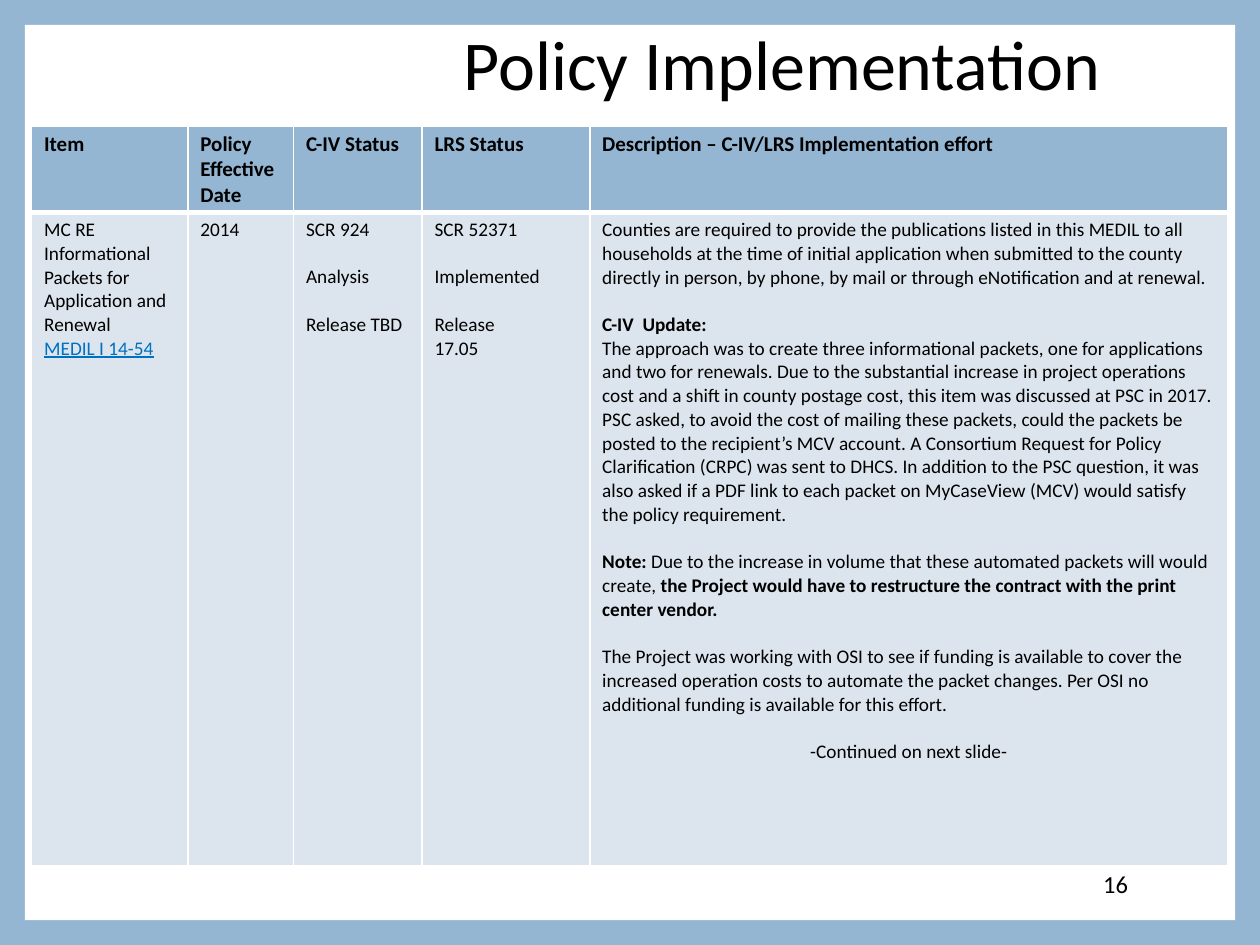
from lxml.etree import SubElement
from pptx import Presentation
from pptx.dml.color import RGBColor
from pptx.enum.shapes import MSO_SHAPE
from pptx.enum.text import MSO_ANCHOR, PP_ALIGN
from pptx.oxml.ns import qn
from pptx.util import Cm, Pt

BLUE, PALE, WHITE, BLACK, LINK = "94B6D2", "DCE5EE", "FFFFFF", "000000", "0070C0"
FONT = "Calibri"
GAP = 13.5

COLUMNS = [3.15, 2.13, 2.59, 3.38, 12.86]
HEADINGS = ["Item", "Policy Effective Date", "C-IV Status", "LRS Status",
            "Description – C-IV/LRS Implementation effort"]
ITEM = [
    {"runs": [("MC RE Informational Packets for Application and Renewal", "")]},
    {"runs": [("MEDIL I 14-54", "link")]},
]
EFFECTIVE = [{"runs": [("2014", "")]}]
CIV_STATUS = [
    {"runs": [("SCR 924", "")]},
    {"runs": [("Analysis", "")], "gap": GAP},
    {"runs": [("Release TBD", "")], "gap": GAP},
]
LRS_STATUS = [
    {"runs": [("SCR 52371", "")]},
    {"runs": [("Implemented", "")], "gap": GAP},
    {"runs": [("Release", "")], "gap": GAP},
    {"runs": [("17.05", "")]},
]
DESCRIPTION = [
    {"runs": [("Counties are required to provide the publications listed in this MEDIL "
               "to all households at the time of initial application when submitted to "
               "the county directly in person, by phone, by mail or through "
               "eNotification and at renewal.", "")]},
    {"runs": [("C-IV  Update:", "bold")], "gap": GAP},
    {"runs": [("The approach was to create three informational packets, one for "
               "applications and two for renewals. Due to the substantial increase in "
               "project operations cost and a shift in county postage cost, this item "
               "was discussed at PSC in 2017. PSC asked, to avoid the cost of mailing "
               "these packets, could the packets be posted to the recipient’s MCV "
               "account. A Consortium Request for Policy Clarification (CRPC) was sent "
               "to DHCS. In addition to the PSC question, it was also asked if a PDF "
               "link to each packet on MyCaseView (MCV) would satisfy the policy "
               "requirement.", "")]},
    {"runs": [("Note: ", "bold"),
              ("Due to the increase in volume that these automated packets will would "
               "create, ", ""),
              ("the Project would have to restructure the contract with the print "
               "center vendor.", "bold")], "gap": GAP},
    {"runs": [("The Project was working with OSI to see if funding is available to "
               "cover the increased operation costs to automate the packet changes. "
               "Per OSI no additional funding is available for this effort.", "")],
     "gap": GAP},
    {"runs": [("-Continued on next slide-", "")], "gap": GAP, "align": PP_ALIGN.CENTER},
]
DETAILS = [ITEM, EFFECTIVE, CIV_STATUS, LRS_STATUS, DESCRIPTION]


def color(value):
    return RGBColor.from_string(value)


def style(font, size, bold=False):
    font.name, font.size, font.bold = FONT, Pt(size), bold
    font.color.rgb = color(BLACK)


def add_panel(slide, left, top, width, height):
    panel = slide.shapes.add_shape(MSO_SHAPE.RECTANGLE, left, top, width, height)
    panel.fill.solid()
    panel.fill.fore_color.rgb = color(WHITE)
    panel.line.fill.background()
    panel.shadow.inherit = False
    slide.shapes.title._element.addprevious(panel._element)


def place_title(slide, left, top, width, height):
    title = slide.shapes.title
    title.left, title.top, title.width, title.height = left, top, width, height
    frame = title.text_frame
    frame.text = "Policy Implementation"
    frame.vertical_anchor = MSO_ANCHOR.MIDDLE
    heading = frame.paragraphs[0]
    heading.alignment, heading.line_spacing = PP_ALIGN.RIGHT, 0.9
    style(heading.font, 40)


def add_page_number(slide, left, top, width, height):
    frame = slide.shapes.add_textbox(left, top, width, height).text_frame
    frame.word_wrap = True
    frame.vertical_anchor = MSO_ANCHOR.MIDDLE
    number = frame.paragraphs[0]
    number.text, number.alignment = "16", PP_ALIGN.RIGHT
    style(number.font, 14)


def format_cell(cell, fill, bottom):
    properties = cell._tc.get_or_add_tcPr()
    for side, weight in (("L", 1), ("R", 1), ("T", 1), ("B", bottom)):
        border = SubElement(properties, qn(f"a:ln{side}"), w=str(Pt(weight)))
        SubElement(SubElement(border, qn("a:solidFill")), qn("a:srgbClr"), val=WHITE)
    cell.fill.solid()
    cell.fill.fore_color.rgb = color(fill)
    cell.margin_left = cell.margin_right = Cm(0.25)
    cell.margin_top = cell.margin_bottom = Cm(0.11)


def write_details(cell, details):
    frame = cell.text_frame
    for index, detail in enumerate(details):
        paragraph = frame.add_paragraph() if index else frame.paragraphs[0]
        paragraph.space_before = Pt(detail.get("gap", 0))
        paragraph.alignment = detail.get("align", PP_ALIGN.LEFT)
        for text, look in detail["runs"]:
            run = paragraph.add_run()
            run.text = text
            style(run.font, 11, look == "bold")
            if look == "link":
                run.font.underline = True
                run.font.color.rgb = color(LINK)


def add_policy_table(slide, left, top, width, height):
    header_height = Cm(1.72)
    table = slide.shapes.add_table(2, len(COLUMNS), left, top, width, height).table
    table.horz_banding = False
    table.rows[0].height = header_height
    table.rows[1].height = height - header_height
    for index, column_width in enumerate(COLUMNS):
        table.columns[index].width = Cm(column_width)
        header, body = table.cell(0, index), table.cell(1, index)
        format_cell(header, BLUE, 3)
        format_cell(body, PALE, 1)
        header.text = HEADINGS[index]
        style(header.text_frame.paragraphs[0].font, 12, True)
        write_details(body, DETAILS[index])


def main():
    deck = Presentation()
    deck.slide_width, deck.slide_height = Cm(25.4), Cm(19.05)
    slide = deck.slides.add_slide(deck.slide_layouts[5])
    slide.background.fill.solid()
    slide.background.fill.fore_color.rgb = color(BLUE)
    add_panel(slide, Cm(0.5), Cm(0.5), Cm(24.4), Cm(18.05))
    place_title(slide, Cm(1.27), Cm(0), Cm(21.16), Cm(2.74))
    add_page_number(slide, Cm(19.43), Cm(17.3), Cm(3.56), Cm(1.02))
    add_policy_table(slide, Cm(0.64), Cm(2.54), Cm(sum(COLUMNS)), Cm(14.88))
    deck.save("out.pptx")


if __name__ == "__main__":
    main()
